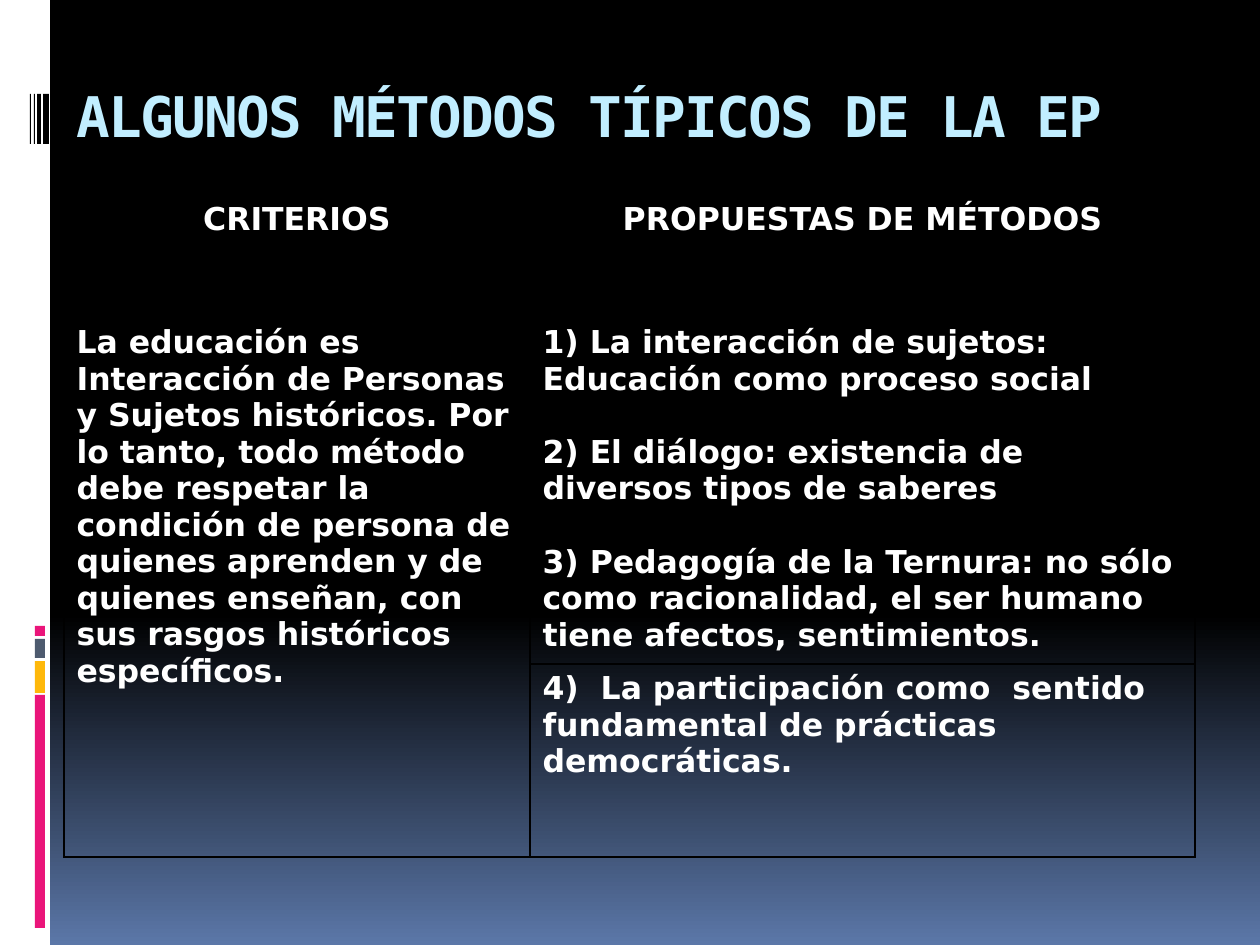
from dataclasses import dataclass

from pptx import Presentation
from pptx.dml.color import RGBColor
from pptx.enum import shapes, text
from pptx.oxml import parse_xml
from pptx.oxml.ns import nsdecls
from pptx.util import Emu, Pt

EMU_PER_PX = 914400 / 126

BLACK = RGBColor(0x00, 0x00, 0x00)
WHITE = RGBColor(0xFF, 0xFF, 0xFF)
BLUE = RGBColor(0x5B, 0x77, 0xA8)
PALE_BLUE = RGBColor(0xC1, 0xEE, 0xFF)
PINK = RGBColor(0xEA, 0x15, 0x7A)
AMBER = RGBColor(0xFE, 0xB8, 0x0A)
SLATE = RGBColor(0x4E, 0x5B, 0x6F)

BODY_FONT = "DejaVu Sans"
TITLE_FONT = "DejaVu Sans Mono"


@dataclass(frozen=True)
class Bar:
    left: int
    top: int
    width: int
    height: int
    color: RGBColor


SIDE_BAND = Bar(0, 0, 50, 945, WHITE)
ACCENTS = [
    Bar(35, top, 10, height, color)
    for top, height, color in (
        (695, 233, PINK),
        (661, 32, AMBER),
        (639, 19, SLATE),
        (626, 10, PINK),
    )
]
TICKS = [
    Bar(left, 94, width, 50, BLACK)
    for left, width in ((43, 6), (37, 4), (34, 1), (30, 1))
]

COLUMN_WIDTHS = (466, 665)
ROW_HEIGHTS = (123, 110, 110, 110, 193)
HEADINGS = ("CRITERIOS", "PROPUESTAS DE MÉTODOS")
CRITERION = (
    "La educación es Interacción de Personas y Sujetos históricos. "
    "Por lo tanto, todo método debe respetar la condición de persona de "
    "quienes aprenden y de quienes enseñan, con sus rasgos históricos "
    "específicos."
)
METHODS = (
    "1) La interacción de sujetos: Educación como proceso social",
    "2) El diálogo: existencia de diversos tipos de saberes",
    "3) Pedagogía de la Ternura: no sólo como racionalidad, el ser humano "
    "tiene afectos, sentimientos.",
    "4)  La participación como  sentido fundamental de prácticas democráticas.",
)


def px(length: int) -> Emu:
    return Emu(round(length * EMU_PER_PX))


def paint_background(page) -> None:
    fill = page.background.fill
    fill.gradient()
    fill.gradient_angle = 270
    for stop, position, color in zip(fill.gradient_stops, (0.65, 1), (BLACK, BLUE)):
        stop.position = position
        stop.color.rgb = color


def draw_bar(page, bar: Bar) -> None:
    shape = page.shapes.add_shape(
        shapes.MSO_SHAPE.RECTANGLE,
        px(bar.left), px(bar.top), px(bar.width), px(bar.height),
    )
    shape.shadow.inherit = False
    shape.fill.solid()
    shape.fill.fore_color.rgb = bar.color
    shape.line.fill.background()


def style_span(span, font: str, size: int, color: RGBColor) -> None:
    span.font.name = font
    span.font.size = Pt(size)
    span.font.bold = True
    span.font.color.rgb = color


def draw_title(page) -> None:
    box = page.shapes.add_textbox(px(64), px(76), px(1134), px(78))
    frame = box.text_frame
    frame.word_wrap = True
    frame.vertical_anchor = text.MSO_ANCHOR.MIDDLE
    frame.text = "ALGUNOS MÉTODOS TÍPICOS DE LA EP"
    span = frame.paragraphs[0].runs[0]
    style_span(span, TITLE_FONT, 32, PALE_BLUE)
    span.font._element.set("spc", "-100")


def outline_cell(cell) -> None:
    """Give the cell a transparent fill and thin black borders."""
    cell.fill.background()
    properties = cell._tc.get_or_add_tcPr()
    for index, side in enumerate(("lnL", "lnR", "lnT", "lnB")):
        border = parse_xml(
            f'<a:{side} {nsdecls("a")} w="{Pt(1)}"><a:solidFill>'
            f'<a:srgbClr val="{BLACK}"/></a:solidFill></a:{side}>'
        )
        properties.insert(index, border)


def write_cell(cell, words: str, alignment: text.PP_ALIGN) -> None:
    cell.text_frame.text = words
    para = cell.text_frame.paragraphs[0]
    para.alignment = alignment
    style_span(para.runs[0], BODY_FONT, 18, WHITE)


def draw_methods_table(page) -> None:
    table = page.shapes.add_table(
        len(ROW_HEIGHTS), len(COLUMN_WIDTHS), px(64), px(195),
        px(sum(COLUMN_WIDTHS)), px(sum(ROW_HEIGHTS)),
    ).table
    table.first_row = False
    table.horz_banding = False
    for column, width in zip(table.columns, COLUMN_WIDTHS):
        column.width = px(width)
    for row, height in zip(table.rows, ROW_HEIGHTS):
        row.height = px(height)
    for cell in table.iter_cells():
        outline_cell(cell)

    for index, heading in enumerate(HEADINGS):
        write_cell(table.cell(0, index), heading, text.PP_ALIGN.CENTER)
    table.cell(1, 0).merge(table.cell(len(METHODS), 0))
    write_cell(table.cell(1, 0), CRITERION, text.PP_ALIGN.LEFT)
    for index, method in enumerate(METHODS, start=1):
        write_cell(table.cell(index, 1), method, text.PP_ALIGN.LEFT)


def main() -> None:
    deck = Presentation()
    deck.slide_width, deck.slide_height = px(1260), px(945)
    page = deck.slides.add_slide(deck.slide_layouts[6])
    paint_background(page)
    for bar in (SIDE_BAND, *ACCENTS, *TICKS):
        draw_bar(page, bar)
    draw_title(page)
    draw_methods_table(page)
    deck.save("out.pptx")


if __name__ == "__main__":
    main()
